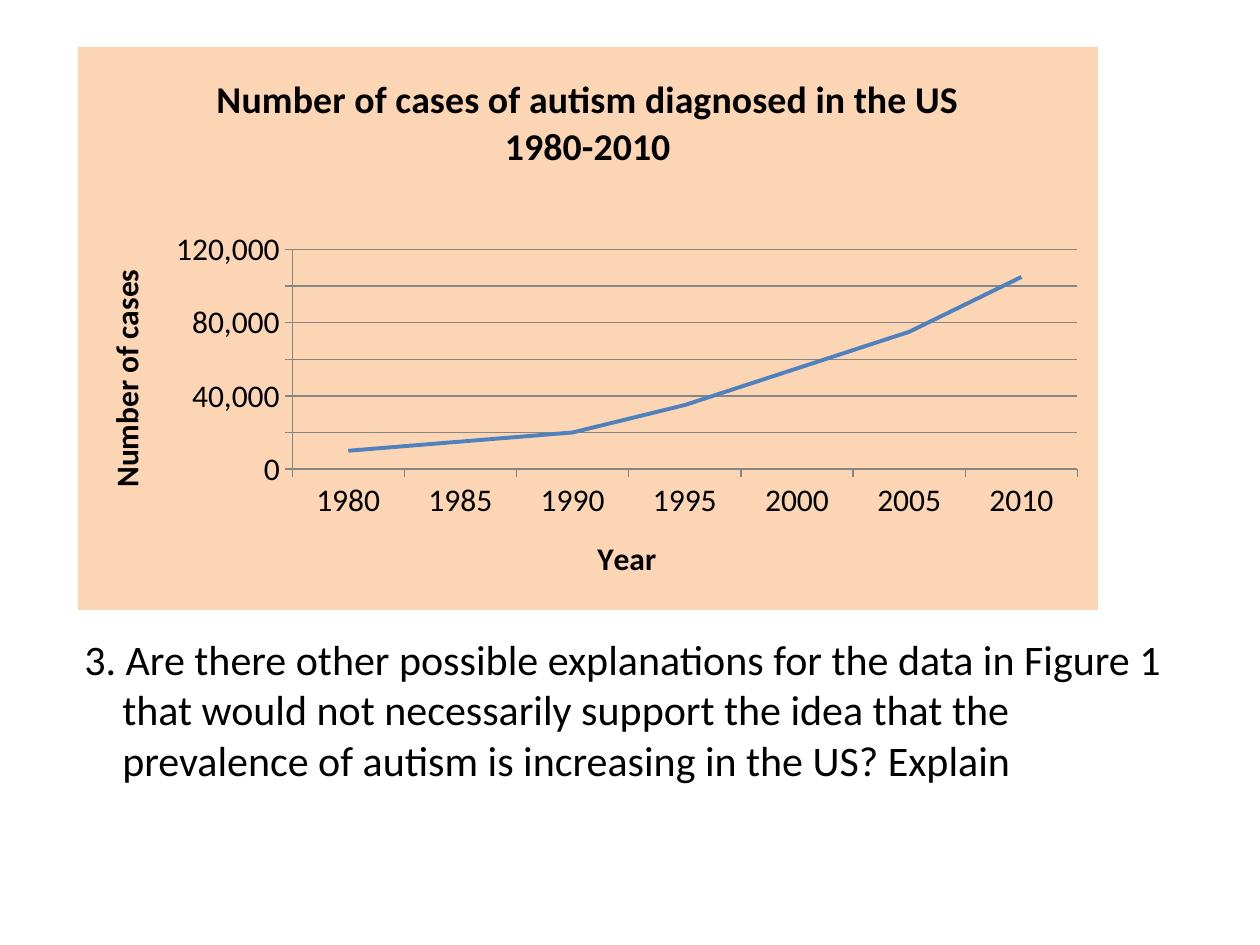
from lxml.etree import SubElement
from pptx import Presentation
from pptx.chart.data import CategoryChartData
from pptx.dml.color import RGBColor
from pptx.enum.chart import XL_CHART_TYPE as ChartType, XL_TICK_MARK as TickMark
from pptx.oxml.ns import qn
from pptx.util import Inches, Pt

PX = Inches(1) / 126
FONT = "Calibri"
BLACK = RGBColor(0x00, 0x00, 0x00)
PEACH = RGBColor(0xFC, 0xD5, 0xB5)
BLUE = RGBColor(0x4F, 0x81, 0xBD)
GRAY = RGBColor(0x86, 0x86, 0x86)

CASES = {1980: 10000, 1985: 15000, 1990: 20000, 1995: 35000,
         2000: 55000, 2005: 75000, 2010: 105000}
QUESTION = [
    "3. Are there other possible explanations for the data in Figure 1",
    "that would not necessarily support the idea that the",
    "prevalence of autism is increasing in the US? Explain",
]


def emu(px):
    return round(px * PX)


def style_font(font, size, bold=False):
    font.name, font.size, font.bold = FONT, Pt(size), bold
    font.color.rgb = BLACK


def set_title(owner, text, size):
    frame = (owner.chart_title if hasattr(owner, "chart_title") else owner.axis_title).text_frame
    frame.text = text
    style_font(frame.paragraphs[0].font, size, bold=True)


def style_axis(axis, title):
    set_title(axis, title, 18)
    style_font(axis.tick_labels.font, 18)
    axis.major_tick_mark = TickMark.OUTSIDE
    axis.minor_tick_mark = TickMark.NONE
    axis.format.line.color.rgb = GRAY


def fix_plot_area(chart, **fractions):
    """Place the inner plot area as fractions of the chart."""
    plot_area = chart.plots[0]._element.getparent()
    for old in plot_area.findall(qn("c:layout")):
        plot_area.remove(old)
    layout = plot_area.makeelement(qn("c:layout"))
    plot_area.insert(0, layout)
    manual = SubElement(layout, qn("c:manualLayout"))
    settings = {"layoutTarget": "inner", "xMode": "edge", "yMode": "edge", **fractions}
    for name, value in settings.items():
        SubElement(manual, qn(f"c:{name}")).set("val", str(value))


def add_cases_chart(slide, left, top, width, height):
    data = CategoryChartData(number_format="#,##0")
    data.categories = [str(year) for year in CASES]
    data.add_series("Series 1", CASES.values())
    chart = slide.shapes.add_chart(
        ChartType.LINE, *map(emu, (left, top, width, height)), data).chart
    chart.has_legend = False
    style_font(chart.font, 18)
    set_title(chart, "Number of cases of autism diagnosed in the US 1980-2010", 21.6)

    # Axes and gridlines
    style_axis(chart.category_axis, "Year")
    cases_axis = chart.value_axis
    style_axis(cases_axis, "Number of cases ")
    cases_axis.minimum_scale, cases_axis.maximum_scale = 0, 120000
    cases_axis.major_unit = 20000
    cases_axis.tick_labels.number_format = "#,##0"
    cases_axis.tick_labels.number_format_is_linked = False
    cases_axis.major_gridlines.format.line.color.rgb = GRAY

    # Cases line
    chart.plots[0].vary_by_categories = False
    cases = chart.plots[0].series[0]
    cases.smooth = False
    cases.format.line.color.rgb = BLUE
    cases.format.line.width = Pt(2.25)
    fix_plot_area(chart, x=0.21, y=0.36, w=0.77, h=0.39)

    # Peach background, without a border
    space = chart._chartSpace
    background = space.makeelement(qn("c:spPr"))
    space.find(qn("c:chart")).addnext(background)
    fill = SubElement(background, qn("a:solidFill"))
    SubElement(fill, qn("a:srgbClr")).set("val", str(PEACH))
    SubElement(SubElement(background, qn("a:ln")), qn("a:noFill"))


def add_question(slide, left, top, width, height, indent=38):
    frame = slide.shapes.add_textbox(*map(emu, (left, top, width, height))).text_frame
    frame.word_wrap = True
    frame.text = "\n".join(QUESTION)
    for number, line in enumerate(frame.paragraphs):
        style_font(line.font, 24)
        properties = line._p.get_or_add_pPr()
        properties.set("marL", str(emu(indent)))
        properties.set("indent", str(0 if number else -emu(indent)))


def main():
    deck = Presentation()
    deck.slide_width, deck.slide_height = Inches(10), Inches(7.5)
    slide = deck.slides.add_slide(deck.slide_layouts[6])
    add_question(slide, 72, 627, 1121, 357)
    add_cases_chart(slide, 78, 47, 1020, 563)
    deck.save("out.pptx")


if __name__ == "__main__":
    main()
